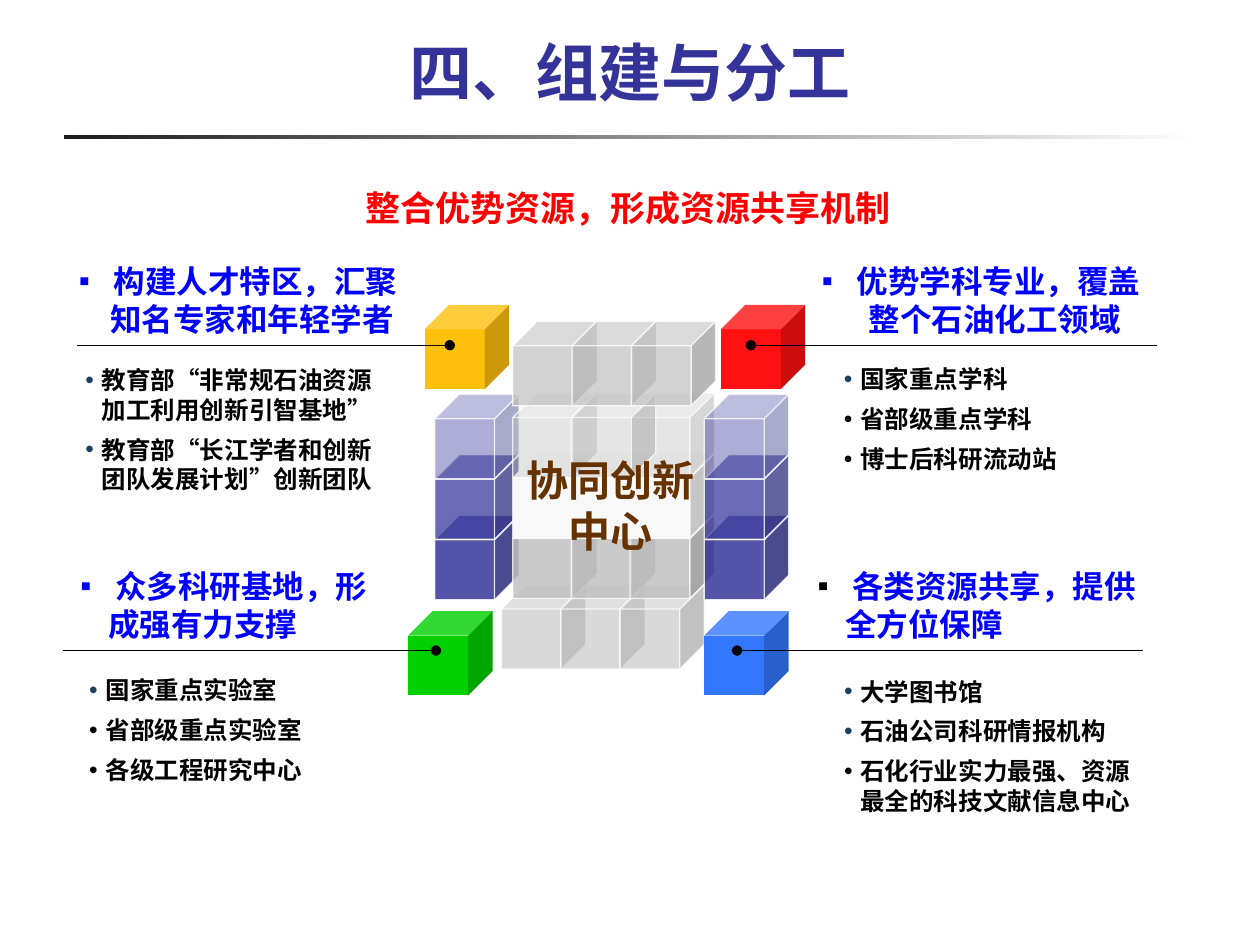
"""Build the slide on team set-up and division of work around a cube diagram."""
import pptx
import pptx.util
import pptx.dml.color
import pptx.enum.shapes
import pptx.enum.text
import pptx.oxml.ns
import lxml.etree

FONT = "Noto Sans CJK SC"
qn = pptx.oxml.ns.qn
sub = lxml.etree.SubElement
MSO = pptx.enum.shapes.MSO_SHAPE
LEFT = pptx.enum.text.PP_ALIGN.LEFT
CENTER = pptx.enum.text.PP_ALIGN.CENTER


def rgb(colour):
    return pptx.dml.color.RGBColor.from_string(colour)


def write(tf, size, colour, paras, align=LEFT, bullet=None, indent=0):
    tf.margin_top = pptx.util.Inches(0.05)
    tf.margin_bottom = 0
    for i, (text, bullet_colour) in enumerate(paras):
        p = tf.paragraphs[0] if i == 0 else tf.add_paragraph()
        p.alignment = align
        p.line_spacing = pptx.util.Pt(size * 1.2)
        p.space_before = pptx.util.Pt(6 if i and bullet else 0)
        if bullet:
            pPr = p._p.get_or_add_pPr()
            pPr.set("marL", str(pptx.util.Inches(indent)))
            pPr.set("indent", str(-pptx.util.Inches(indent)))
            sub(sub(pPr, qn("a:buClr")), qn("a:srgbClr"), val=bullet_colour)
            sub(pPr, qn("a:buFont"), typeface="Arial")
            sub(pPr, qn("a:buChar"), char=bullet)
        r = p.add_run()
        r.text = text
        r.font.size = pptx.util.Pt(size)
        r.font.bold = True
        r.font.color.rgb = rgb(colour)
        r.font.name = FONT
        rPr = r._r.get_or_add_rPr()
        rPr.set("lang", "zh-CN")
        sub(rPr, qn("a:ea"), typeface=FONT)


prs = pptx.Presentation()
prs.slide_width = pptx.util.Inches(10)
prs.slide_height = pptx.util.Inches(7.5)
col = prs.slide_width / 100
row = prs.slide_height / 75
s = prs.slides.add_slide(prs.slide_layouts[5])

sp = s.shapes.add_shape(MSO.RECTANGLE, int(5.1 * col), int(10.7 * row), int(90 * col), int(0.3 * row))
sp.shadow.inherit = False
sp.line.fill.background()
sp.fill.gradient()
sp.fill.gradient_angle = 0
for stop, colour in zip(sp.fill.gradient_stops, ("1C1C1C", "FFFFFF")):
    stop.color.rgb = rgb(colour)

title = s.shapes.title
title.left, title.top = 0, int(2.3 * row)
title.width, title.height = prs.slide_width, int(6.4 * row)
title.text_frame.vertical_anchor = pptx.enum.text.MSO_ANCHOR.BOTTOM
write(title.text_frame, 36, "333399", [("四、组建与分工", None)], CENTER)

SIDE = 6.7
GREY, INDIGO = "C0C0C0", "333399"
column_tops = [(40.9, 84), (36.1, 72), (31.3, 40)]
cubes = [(32.4, 48.5, SIDE, "00D000", 100)]
cubes += [(39.8 + 4.7 * i, 46.4, SIDE, GREY, 60) for i in range(3)]
cubes += [(34.5, top, SIDE, INDIGO, alpha) for top, alpha in column_tops]
cubes += [(40.7 + 4.65 * i, 40.8, SIDE, GREY, 84) for i in range(3)]
cubes += [(40.7, 36, 16, "F8F8F8", 100)]
cubes += [(40.7 + 4.65 * i, 31.2, SIDE, GREY, 40) for i in (0, 2, 1)]
cubes += [(55.9, 48.5, SIDE, "3377FF", 100), (33.7, 24.2, SIDE, "FFC00D", 100)]
cubes += [(55.9, top, SIDE, INDIGO, alpha) for top, alpha in column_tops]
cubes += [(40.7 + 4.7 * i, 25.5, SIDE, GREY, 70) for i in range(3)]
cubes += [(57.2, 24.2, SIDE, "FF1111", 100)]
corners = ("00D000", "3377FF", "FFC00D", "FF1111")

for left, top, width, colour, alpha in cubes:
    sp = s.shapes.add_shape(MSO.CUBE, int(left * col), int(top * row), int(width * col), int(SIDE * row))
    sp.shadow.inherit = False
    sp.adjustments[0] = 0.29
    sp.fill.solid()
    sp.fill.fore_color.rgb = rgb(colour)
    if colour in corners:
        sp.line.fill.background()
        continue
    sp.line.color.rgb = rgb("FFFFFF")
    sp.line.width = pptx.util.Pt(0.75)
    for clr, opacity in zip(sp._element.spPr.iter(qn("a:srgbClr")), (alpha, 80)):
        sub(clr, qn("a:alpha"), val=str(opacity * 1000))

for start, end, y in [(34.6, 5, 51.63), (58.5, 90.7, 51.63), (35.7, 6.1, 27.4), (59.6, 91.8, 27.4)]:
    line = s.shapes.add_connector(pptx.enum.shapes.MSO_CONNECTOR.STRAIGHT,
                                  int(start * col), int(y * row), int(end * col), int(y * row))
    line.line.color.rgb = rgb("000000")
    line.line.width = pptx.util.Pt(0.75)
    sub(line.line._get_or_add_ln(), qn("a:headEnd"), type="oval")
    sub(line._element.spPr, qn("a:effectLst"))

BLUE, BLACK, NAVY = "0000FF", "000000", "1F3F5F"
heading = dict(size=18, colour=BLUE, bullet="▪", indent=0.22)
detail = dict(size=14, colour=BLACK, bullet="•", indent=0.13)
texts = [
    (40.7, 35.6, 15.5, 9.1, dict(size=24, colour="663300", align=CENTER),
     [("协同创新", None), ("中心", None)]),
    (4.7, 20.3, 28.4, 7.1, dict(heading, align=CENTER), [(" 构建人才特区，汇聚知名专家和年轻学者", BLUE)]),
    (63.9, 20.3, 27.9, 7.1, dict(heading, align=CENTER), [(" 优势学科专业，覆盖整个石油化工领域", BLUE)]),
    (5.4, 44.5, 25.9, 7.1, heading, [(" 众多科研基地，形成强有力支撑", BLUE)]),
    (63.9, 44.5, 27.9, 7.1, heading, [(" 各类资源共享，提供全方位保障", BLACK)]),
    (5.8, 28.5, 26, 11.6, detail,
     [("教育部“非常规石油资源加工利用创新引智基地”", NAVY),
      ("教育部“长江学者和创新团队发展计划”创新团队", NAVY)]),
    (66, 28.4, 21.3, 9.6, detail,
     [("国家重点学科", NAVY), ("省部级重点学科", BLACK), ("博士后科研流动站", BLACK)]),
    (6.1, 53.1, 20.6, 12.4, detail,
     [("国家重点实验室", NAVY), ("省部级重点实验室", BLACK), ("各级工程研究中心", BLACK)]),
    (66, 53.2, 25.9, 12.1, detail,
     [("大学图书馆", NAVY), ("石油公司科研情报机构", NAVY),
      ("石化行业实力最强、资源最全的科技文献信息中心", BLACK)]),
    (28, 14.3, 44.1, 4.4, dict(size=20, colour="FF0000"), [("整合优势资源，形成资源共享机制", None)]),
]
for left, top, width, height, style, paras in texts:
    sp = s.shapes.add_textbox(int(left * col), int(top * row), int(width * col), int(height * row))
    sp.text_frame.word_wrap = True
    write(sp.text_frame, paras=paras, **style)

prs.save("out.pptx")
